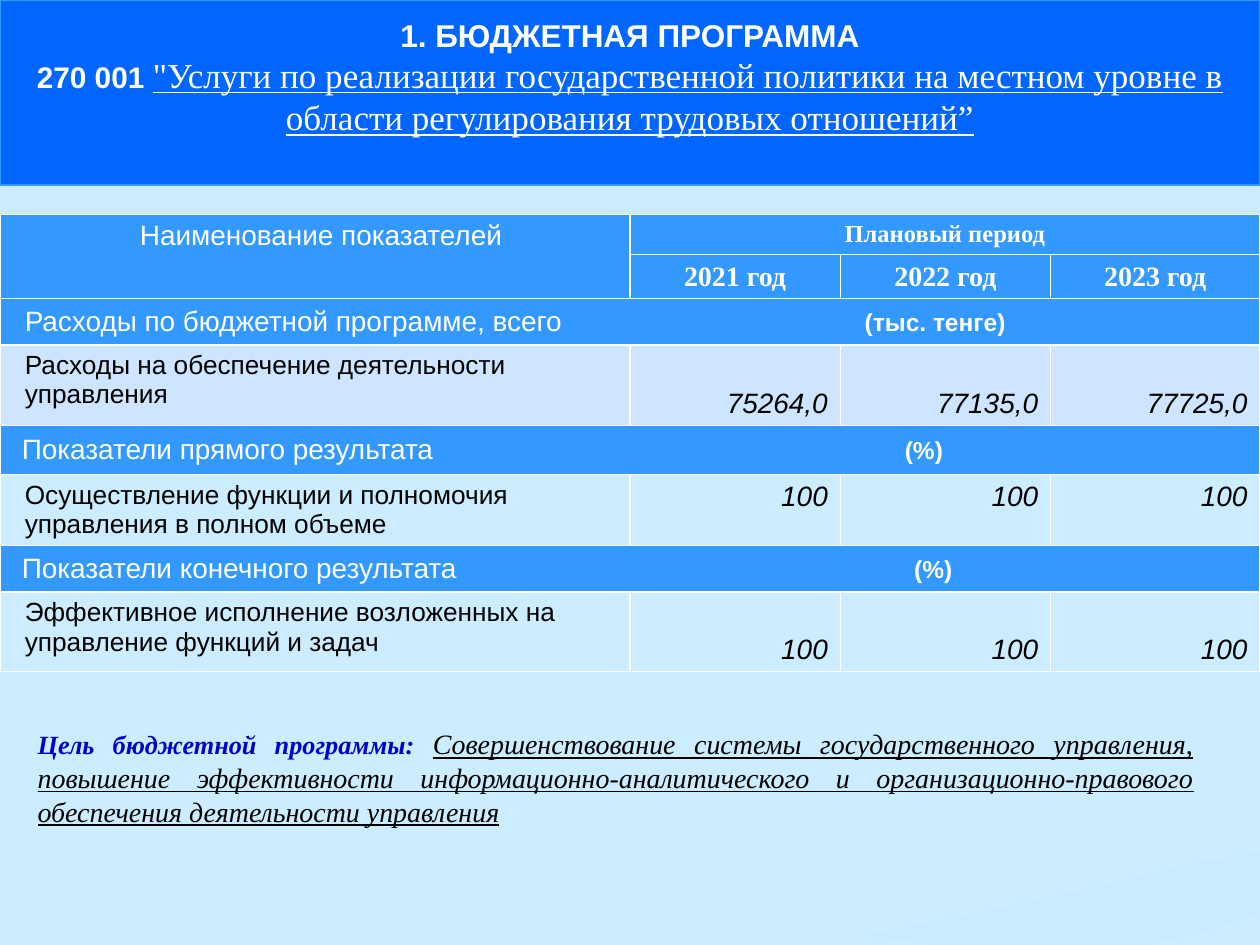
"""Build the budget programme slide with its table of planned figures."""
from lxml import etree
from pptx import Presentation, util as u
from pptx.dml.color import RGBColor
from pptx.enum import shapes, text
from pptx.oxml import ns

WHITE, BLACK, BLUE, PALE = "FFFFFF", "000000", "3399FF", "CDE5FE"
SANS, SERIF = "Arial", "Times New Roman"
LEFT, MID, RIGHT, FULL = (text.PP_ALIGN.LEFT, text.PP_ALIGN.CENTER,
                          text.PP_ALIGN.RIGHT, text.PP_ALIGN.JUSTIFY)
TOP, CENTRE, BASE = text.MSO_ANCHOR.TOP, text.MSO_ANCHOR.MIDDLE, text.MSO_ANCHOR.BOTTOM


def hue(code):
    return RGBColor.from_string(code)


def node(parent, tag, **attrs):
    return etree.SubElement(parent, ns.qn(tag), attrs)


def look(size, color=WHITE, font=SANS, bold=False, slant=False, under=False):
    return size, color, font, bold, slant, under


class Deck:
    def __init__(self, wide, high, back):
        self.show = Presentation()
        self.show.slide_width, self.show.slide_height = u.Cm(wide), u.Cm(high)
        self.slide = self.show.slides.add_slide(self.show.slide_layouts[6])
        fill = self.slide.background.fill
        fill.solid()
        fill.fore_color.rgb = hue(back)

    def label(self, frame, parts, align, tab=None):
        frame.word_wrap = True
        para = frame.paragraphs[0]
        para.alignment = align
        for words, style in parts:
            if words == "\v":
                para.add_line_break()
                continue
            run = para.add_run()
            run.text = words
            size, color, name, bold, slant, under = style
            font = run.font
            font.size, font.name, font.bold = u.Pt(size), name, bold
            font.italic, font.underline = slant, under
            font.color.rgb = hue(color)
        if tab:
            stops = node(para._p.get_or_add_pPr(), "a:tabLst")
            node(stops, "a:tab", pos=str(u.Cm(tab)), algn="l")

    def box(self, place, fill, line, parts):
        rect = self.slide.shapes.add_shape(shapes.MSO_SHAPE.RECTANGLE, *map(u.Cm, place))
        rect.shadow.inherit = False
        rect.fill.solid()
        rect.fill.fore_color.rgb = hue(fill)
        rect.line.color.rgb = hue(line)
        rect.line.width = u.Pt(0.75)
        rect.text_frame.vertical_anchor = TOP
        rect.text_frame.margin_top = u.Cm(0.32)
        self.label(rect.text_frame, parts, MID)

    def note(self, place, parts):
        frame = self.slide.shapes.add_textbox(*map(u.Cm, place)).text_frame
        self.label(frame, parts, FULL)

    def wave(self, points, fill, alpha):
        spots = [(u.Cm(x), u.Cm(y)) for x, y in points]
        form = self.slide.shapes.build_freeform(*spots[0])
        form.add_line_segments(spots[1:])
        shape = form.convert_to_shape()
        shape.shadow.inherit = False
        shape.line.fill.background()
        shape.fill.solid()
        shape.fill.fore_color.rgb = hue(fill)
        tint = shape._element.spPr.find(".//" + ns.qn("a:srgbClr"))
        node(tint, "a:alpha", val=str(alpha * 1000))

    def grid(self, place, cols, rows):
        frame = self.slide.shapes.add_table(len(rows), len(cols), *map(u.Cm, place))
        table = frame.table
        table.first_row = table.horz_banding = False
        for col, wide in zip(table.columns, cols):
            col.width = u.Cm(wide)
        for row, high in zip(table.rows, rows):
            row.height = u.Cm(high)
        return table

    def paint(self, cell, fill):
        props = cell._tc.get_or_add_tcPr()
        for side in "LRTB":
            line = node(props, "a:ln" + side, w=str(u.Pt(1)))
            node(node(line, "a:solidFill"), "a:srgbClr", val=WHITE)
        if fill:
            cell.fill.solid()
            cell.fill.fore_color.rgb = hue(fill)
        else:
            cell.fill.background()

    def cell(self, cell, parts, align, anchor, left=0.25, tab=None):
        cell.vertical_anchor = anchor
        cell.margin_left = u.Cm(left)
        self.label(cell.text_frame, parts, align, tab)


def main():
    deck = Deck(25.4, 19.05, "CCECFF")
    deck.wave([(25.4, 17.17), (24, 17.42), (21.77, 17.96), (19.13, 18.54), (17.4, 18.85),
               (18.92, 19.05), (22.99, 19.05), (24, 18.85), (24.71, 18.64), (25.4, 18.39)],
              "C6E7FC", 30)
    deck.box((0, 0, 25.4, 3.73), "0066FF", BLUE, [
        ("1. БЮДЖЕТНАЯ ПРОГРАММА", look(18, bold=True)),
        ("\v", None),
        ("270 001 ", look(17, bold=True)),
        ("\"Услуги по реализации государственной политики на местном уровне "
         "в области регулирования трудовых отношений”", look(20, font=SERIF, under=True))])

    table = deck.grid((0, 4.32, 25.4, 9.22), [12.7, 4.24, 4.24, 4.22],
                      [0.81, 0.89, 0.93, 1.63, 0.99, 1.43, 0.93, 1.61])
    fills = [BLUE, BLUE, BLUE, PALE, BLUE, None, BLUE, None]
    for row, fill in zip(table.rows, fills):
        for cell in row.cells:
            deck.paint(cell, fill)

    table.cell(0, 0).merge(table.cell(1, 0))
    table.cell(0, 1).merge(table.cell(0, 3))
    deck.cell(table.cell(0, 0), [("Наименование показателей", look(16))], MID, TOP, 0.5)
    deck.cell(table.cell(0, 1), [("Плановый период", look(14, font=SERIF, bold=True))],
              MID, CENTRE)
    for col, year in enumerate((2021, 2022, 2023), 1):
        deck.cell(table.cell(1, col), [(f"{year} год", look(16, font=SERIF, bold=True))],
                  MID, CENTRE)

    heads = [(2, "Расходы по бюджетной программе, всего", "(тыс. тенге)", 0.5, 17.43),
             (4, "Показатели прямого результата", "(%)", 0.44, 18.24),
             (6, "Показатели конечного результата", "(%)", 0.44, 18.43)]
    for row, name, unit, left, stop in heads:
        table.cell(row, 0).merge(table.cell(row, 3))
        deck.cell(table.cell(row, 0), [(name + "\t", look(16)), (unit, look(14, bold=True))],
                  LEFT, CENTRE, left, stop - left)

    items = [(3, "Расходы на обеспечение деятельности управления",
              ("75264,0", "77135,0", "77725,0"), BASE),
             (5, "Осуществление функции и полномочия управления в полном объеме",
              ("100",) * 3, TOP),
             (7, "Эффективное исполнение возложенных на управление функций и задач",
              ("100",) * 3, BASE)]
    for row, name, sums, anchor in items:
        deck.cell(table.cell(row, 0), [(name, look(15, BLACK))], LEFT, TOP, 0.5)
        for col, total in enumerate(sums, 1):
            deck.cell(table.cell(row, col), [(total, look(16, BLACK, slant=True))],
                      RIGHT, anchor)

    deck.note((0.51, 14.53, 23.8, 2.31), [
        ("Цель бюджетной программы: ", look(15, "0000CC", SERIF, True, True)),
        ("Совершенствование системы государственного управления, повышение эффективности "
         "информационно-аналитического и организационно-правового обеспечения "
         "деятельности управления", look(16, BLACK, SERIF, slant=True, under=True))])
    deck.show.save("out.pptx")


if __name__ == "__main__":
    main()
